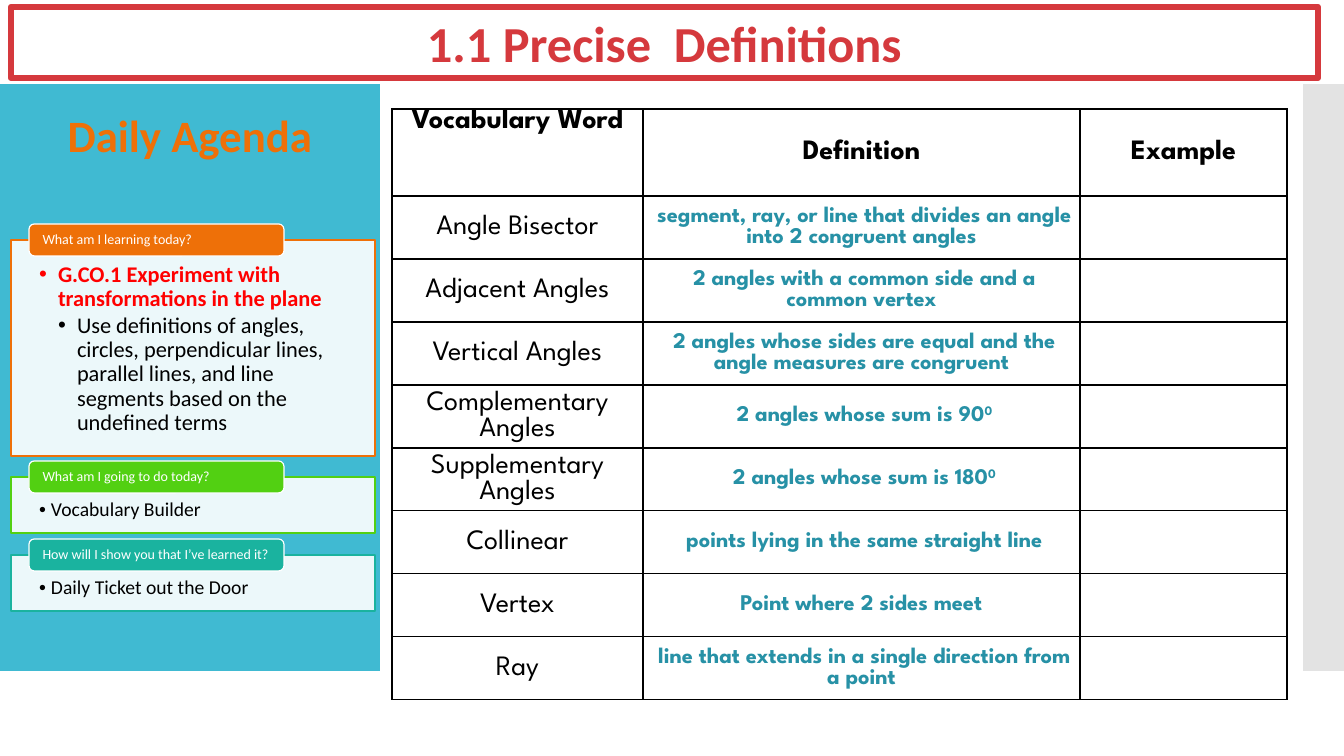
from dataclasses import dataclass

from lxml import etree
from pptx import Presentation
from pptx.dml.color import RGBColor
from pptx.enum.shapes import MSO_SHAPE
from pptx.enum.text import MSO_ANCHOR, MSO_AUTO_SIZE, PP_ALIGN
from pptx.oxml.ns import qn
from pptx.util import Pt

RECTANGLE, ROUNDED = MSO_SHAPE.RECTANGLE, MSO_SHAPE.ROUNDED_RECTANGLE
TOP, MIDDLE = MSO_ANCHOR.TOP, MSO_ANCHOR.MIDDLE
LEFT, CENTER = PP_ALIGN.LEFT, PP_ALIGN.CENTER
EMU_PER_PX = 914400 / 100.8
COMPARISON_LAYOUT = 4


@dataclass(frozen=True)
class Theme:
    sans: str = "Calibri"
    display: str = "League Spartan"
    white: str = "FFFFFF"
    black: str = "000000"
    red: str = "D5393D"
    standard: str = "FF0000"
    blue: str = "40BAD2"
    gray: str = "C8C8C8"
    orange: str = "EE7008"
    green: str = "52D012"
    teal: str = "1AB39F"
    definition: str = "2791A6"
    title_size: int = 36
    heading_size: int = 32
    word_size: int = 20
    body_size: int = 16
    item_size: int = 14
    tab_size: int = 10


THEME = Theme()

# Agenda panels: placeholder index, top, height, colour, tab label, bullet indent,
# items as (text, level, size, colour, bold)
AGENDA = [
    (2, 240, 216, THEME.orange, "What am I learning today?", 19, [
        ("G.CO.1 Experiment with transformations in the plane",
         1, THEME.body_size, THEME.standard, True),
        ("Use definitions of angles, circles, perpendicular lines, parallel lines, "
         "and line segments based on the undefined terms",
         2, THEME.body_size, THEME.black, False)]),
    (3, 477, 56, THEME.green, "What am I going to do today?", 12, [
        ("Vocabulary Builder", 1, THEME.item_size, THEME.black, False)]),
    (4, 555, 56, THEME.teal, "How will I show you that I’ve learned it?", 12, [
        ("Daily Ticket out the Door", 1, THEME.item_size, THEME.black, False)]),
]

# Vocabulary: word, definition, superscript
HEADERS = ["Vocabulary Word", "Definition", "Example"]
VOCABULARY = [
    ("Angle Bisector",
     " segment, ray, or line that divides an angle into 2 congruent angles", ""),
    ("Adjacent Angles", " 2 angles with a common side and a common vertex", ""),
    ("Vertical Angles",
     " 2 angles whose sides are equal and the angle measures are congruent", ""),
    ("Complementary Angles", " 2 angles whose sum is 90", "0"),
    ("Supplementary Angles", " 2 angles whose sum is 180", "0"),
    ("Collinear", " points lying in the same straight line", ""),
    ("Vertex", "Point where 2 sides meet", ""),
    ("Ray", " line that extends in a single direction from a point", ""),
]


def px(value):
    return round(value * EMU_PER_PX)


def place(shape, left, top, width, height):
    shape.left, shape.top = px(left), px(top)
    shape.width, shape.height = px(width), px(height)


def paint(shape, fill, line=None, line_width=0.85, opacity=100):
    shape.fill.solid()
    shape.fill.fore_color.rgb = RGBColor.from_string(fill)
    if opacity < 100:
        color = shape.fill._xPr.find(".//" + qn("a:srgbClr"))
        etree.SubElement(color, qn("a:alpha"), val=str(opacity * 1000))
    if line:
        shape.line.color.rgb = RGBColor.from_string(line)
        shape.line.width = Pt(line_width)
    else:
        shape.line.fill.background()


def add_box(slide, kind, box, fill, **style):
    shape = slide.shapes.add_shape(kind, *map(px, box))
    shape.shadow.inherit = False
    paint(shape, fill, **style)
    return shape


def set_frame(frame, anchor, margins=(10, 5, 10, 5)):
    frame.word_wrap = True
    frame.auto_size = MSO_AUTO_SIZE.NONE
    frame.vertical_anchor = anchor
    (frame.margin_left, frame.margin_top,
     frame.margin_right, frame.margin_bottom) = map(px, margins)


def add_run(paragraph, text, size, color, bold=False, font=THEME.sans, baseline=0):
    run = paragraph.add_run()
    run.text = text
    run.font.name, run.font.size, run.font.bold = font, Pt(size), bold
    run.font.color.rgb = RGBColor.from_string(color)
    if baseline:
        run._r.get_or_add_rPr().set("baseline", str(baseline * 1000))


def set_spacing(paragraph, alignment, line_spacing=1.0, after=0):
    paragraph.alignment = alignment
    paragraph.line_spacing = line_spacing
    paragraph.space_before, paragraph.space_after = Pt(0), Pt(after)


def set_bullet(paragraph, left, hanging):
    properties = paragraph._p.get_or_add_pPr()
    properties.set("marL", str(px(left)))
    properties.set("indent", str(-px(hanging)))
    etree.SubElement(properties, qn("a:buFont"), typeface="Arial")
    etree.SubElement(properties, qn("a:buChar"), char="•")


def fill_heading(placeholder, box, text, size, color):
    place(placeholder, *box)
    set_frame(placeholder.text_frame, MIDDLE)
    paragraph = placeholder.text_frame.paragraphs[0]
    set_spacing(paragraph, CENTER)
    add_run(paragraph, text, size, color, bold=True)


def add_agenda_panel(slide, index, top, height, color, label, indent, items):
    # Bulleted list
    panel = slide.placeholders[index]
    place(panel, 11, top, 364, height)
    paint(panel, THEME.white, line=color, opacity=90)
    frame = panel.text_frame
    set_frame(frame, TOP, (28, 23, 28, 11))
    for number, (text, level, size, text_color, bold) in enumerate(items):
        paragraph = frame.add_paragraph() if number else frame.paragraphs[0]
        paragraph.level = level
        set_spacing(paragraph, LEFT, 0.9, after=2)
        set_bullet(paragraph, indent * level, indent)
        add_run(paragraph, text, size, text_color, bold)
    # Tab on the upper edge
    tab = add_box(slide, ROUNDED, (29, top - 16, 255, 32), color, line=THEME.white)
    set_frame(tab.text_frame, MIDDLE, (12, 0, 10, 0))
    paragraph = tab.text_frame.paragraphs[0]
    set_spacing(paragraph, LEFT, 0.9)
    add_run(paragraph, label, THEME.tab_size, THEME.white)


def format_cell(cell, anchor):
    cell.vertical_anchor = anchor
    cell.margin_left = cell.margin_right = px(7)
    cell.margin_top = cell.margin_bottom = 0
    properties = cell._tc.get_or_add_tcPr()
    for side in ("a:lnL", "a:lnR", "a:lnT", "a:lnB"):
        border = etree.SubElement(properties, qn(side), w=str(Pt(1)))
        fill = etree.SubElement(border, qn("a:solidFill"))
        etree.SubElement(fill, qn("a:srgbClr"), val=THEME.black)
    cell.fill.background()
    paragraph = cell.text_frame.paragraphs[0]
    paragraph.alignment = CENTER
    return paragraph


def add_vocabulary_table(slide):
    widths, heights = [251, 437, 207], [87] + [63] * len(VOCABULARY)
    table = slide.shapes.add_table(len(heights), len(widths), px(392), px(109),
                                   px(sum(widths)), px(sum(heights))).table
    table.first_row = table.horz_banding = False
    for column, width in zip(table.columns, widths):
        column.width = px(width)
    for row, height in zip(table.rows, heights):
        row.height = px(height)
    for column, header in enumerate(HEADERS):
        paragraph = format_cell(table.cell(0, column), MIDDLE if column else TOP)
        add_run(paragraph, header, THEME.word_size, THEME.black, True, THEME.display)
    for row, (word, definition, superscript) in enumerate(VOCABULARY, start=1):
        word_cell, definition_cell, _ = [
            format_cell(table.cell(row, column), MIDDLE) for column in range(len(widths))]
        add_run(word_cell, word, THEME.word_size, THEME.black, font=THEME.display)
        for text, baseline in ((definition, 0), (superscript, 30)):
            if text:
                add_run(definition_cell, text, THEME.body_size, THEME.definition,
                        True, THEME.display, baseline)


def main():
    presentation = Presentation()
    presentation.slide_width, presentation.slide_height = px(1344), px(756)
    slide = presentation.slides.add_slide(presentation.slide_layouts[COMPARISON_LAYOUT])

    # Side bands, behind the placeholders
    for box, color, opacity in (((0, 84, 380, 587), THEME.blue, 100),
                                ((1303, 84, 41, 587), THEME.gray, 50)):
        band = add_box(slide, RECTANGLE, box, color, opacity=opacity)
        slide.shapes._spTree.insert(2, band._element)

    # Title and agenda heading
    title = slide.shapes.title
    fill_heading(title, (11, 7, 1307, 71), "1.1 Precise  Definitions",
                 THEME.title_size, THEME.red)
    paint(title, THEME.white, line=THEME.red, line_width=4.5)
    fill_heading(slide.placeholders[1], (43, 102, 294, 65), "Daily Agenda",
                 THEME.heading_size, THEME.orange)

    # Agenda panels and vocabulary
    for panel in AGENDA:
        add_agenda_panel(slide, *panel)
    add_vocabulary_table(slide)
    presentation.save("out.pptx")


if __name__ == "__main__":
    main()
